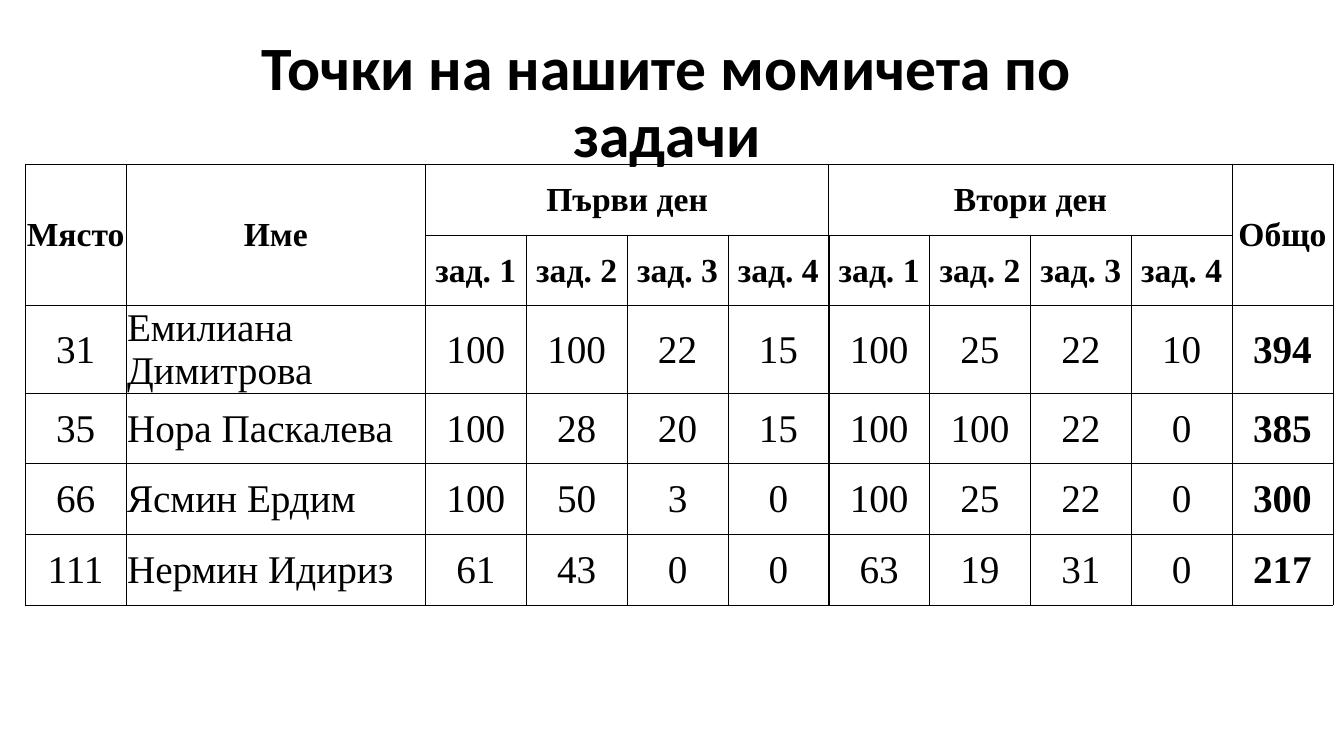
from lxml import etree
from pptx import Presentation
from pptx.dml.color import RGBColor
from pptx.enum.text import MSO_ANCHOR, MSO_AUTO_SIZE, PP_ALIGN
from pptx.oxml.ns import qn
from pptx.util import Inches, Pt

COLORS = {"ink": "000000"}
TASKS = ["зад. 1", "зад. 2", "зад. 3", "зад. 4"]
ROWS = [
    ["Място", "Име", "Първи ден", "", "", "", "Втори ден", "", "", "", "Общо"],
    ["", "", *TASKS, *TASKS, ""],
    ["31", "Емилиана Димитрова", 100, 100, 22, 15, 100, 25, 22, 10, 394],
    ["35", "Нора Паскалева", 100, 28, 20, 15, 100, 100, 22, 0, 385],
    ["66", "Ясмин Ердим", 100, 50, 3, 0, 100, 25, 22, 0, 300],
    ["111", "Нермин Идириз", 61, 43, 0, 0, 63, 19, 31, 0, 217],
]
HEADER_ROWS = 2
NAME, DAY_ONE_END, DAY_TWO_START, TOTAL = 1, 5, 6, 10
MERGES = [(0, 0, 1, 0), (0, 1, 1, 1), (0, 2, 0, 5), (0, 6, 0, 9), (0, 10, 1, 10)]


def write(paragraph, text, font_format, align):
    run = paragraph.add_run()
    run.text = text
    for name, value in font_format.items():
        setattr(run.font, name, value)
    run.font.color.rgb = RGBColor.from_string(COLORS["ink"])
    paragraph.alignment = align


def add_border(cell, side, width):
    properties = cell._tc.get_or_add_tcPr()
    line = etree.SubElement(properties, qn(f"a:ln{side}"), w=str(int(Pt(width))))
    fill = etree.SubElement(line, qn("a:solidFill"))
    etree.SubElement(fill, qn("a:srgbClr"), val=COLORS["ink"])


presentation = Presentation()
presentation.slide_width = Inches(13.33)
presentation.slide_height = Inches(7.5)
slide = presentation.slides.add_slide(presentation.slide_layouts[5])

# Title
title = slide.shapes.title
title.left, title.top = Inches(1.55), Inches(0.43)
title.width, title.height = Inches(10.13), Inches(1.21)
frame_format = {"word_wrap": True, "auto_size": MSO_AUTO_SIZE.NONE,
                "vertical_anchor": MSO_ANCHOR.MIDDLE}
for name, value in frame_format.items():
    setattr(title.text_frame, name, value)
heading = title.text_frame.paragraphs[0]
heading.line_spacing = 0.9
write(heading, "Точки на нашите момичета по задачи",
      {"name": "Calibri", "size": Pt(44), "bold": True}, PP_ALIGN.CENTER)

# Table grid
table = slide.shapes.add_table(
    len(ROWS), len(ROWS[0]), Inches(0.25), Inches(1.63), Inches(12.94), Inches(4.2)
).table
table.first_row = table.horz_banding = False
for column in table.columns:
    column.width = Inches(1)
table.columns[NAME].width = Inches(2.97)
for row in table.rows:
    row.height = Inches(0.7)

# Cells
cell_format = {"margin_left": Inches(0.01), "margin_right": Inches(0.01),
               "margin_top": Inches(0.01), "margin_bottom": 0,
               "vertical_anchor": MSO_ANCHOR.MIDDLE}
for r, values in enumerate(ROWS):
    is_header = r < HEADER_ROWS
    for c, value in enumerate(values):
        cell = table.cell(r, c)
        for name, setting in cell_format.items():
            setattr(cell, name, setting)

        # A heavier line parts the two days below their headings
        widths = dict.fromkeys("LRTB", 0.5)
        if r > 0 and c == DAY_ONE_END:
            widths["R"] = 2
        if r > 0 and c == DAY_TWO_START:
            widths["L"] = 2
        for side, width in widths.items():
            add_border(cell, side, width)
        cell.fill.background()

        if value != "":
            font_format = {"name": "Times New Roman", "size": Pt(24 if is_header else 28),
                           "bold": is_header or c == TOTAL}
            left_aligned = c == NAME and not is_header
            write(cell.text_frame.paragraphs[0], str(value), font_format,
                  PP_ALIGN.LEFT if left_aligned else PP_ALIGN.CENTER)

# Merged headings
for top, left, bottom, right in MERGES:
    table.cell(top, left).merge(table.cell(bottom, right))

presentation.save("out.pptx")
